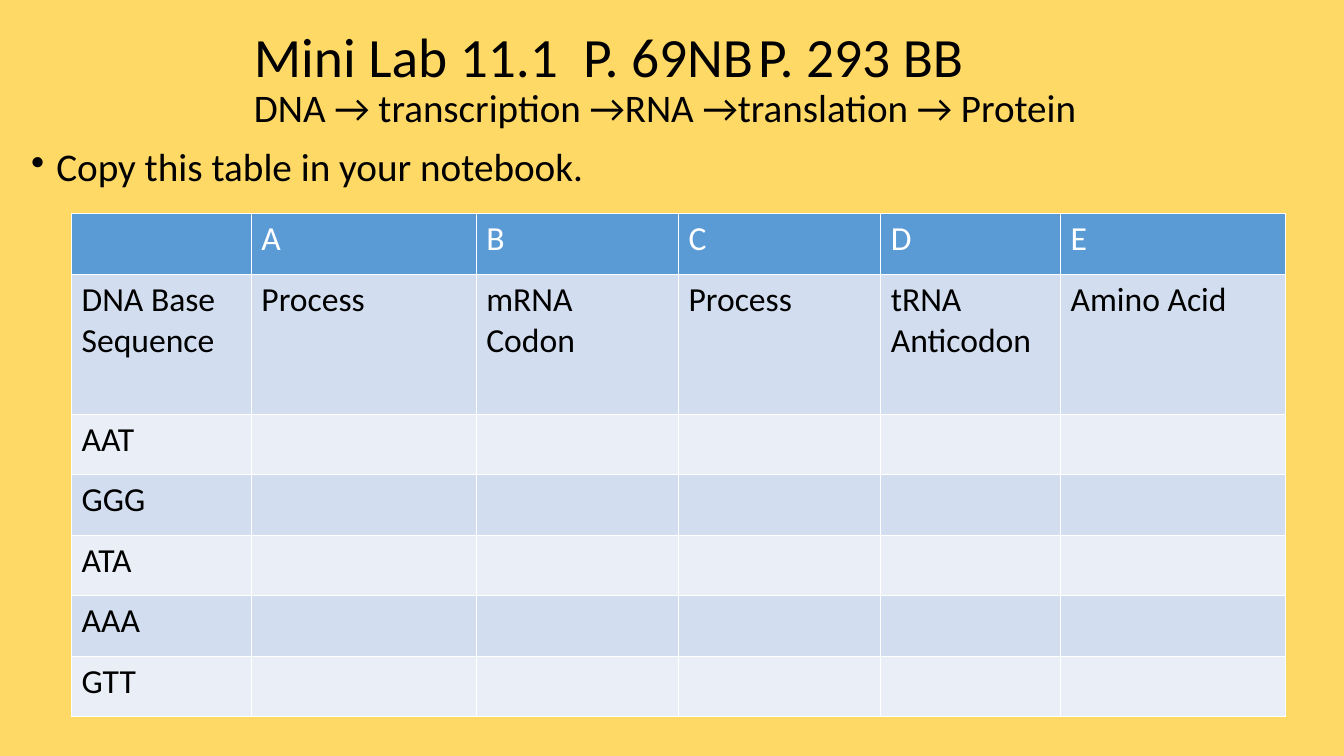
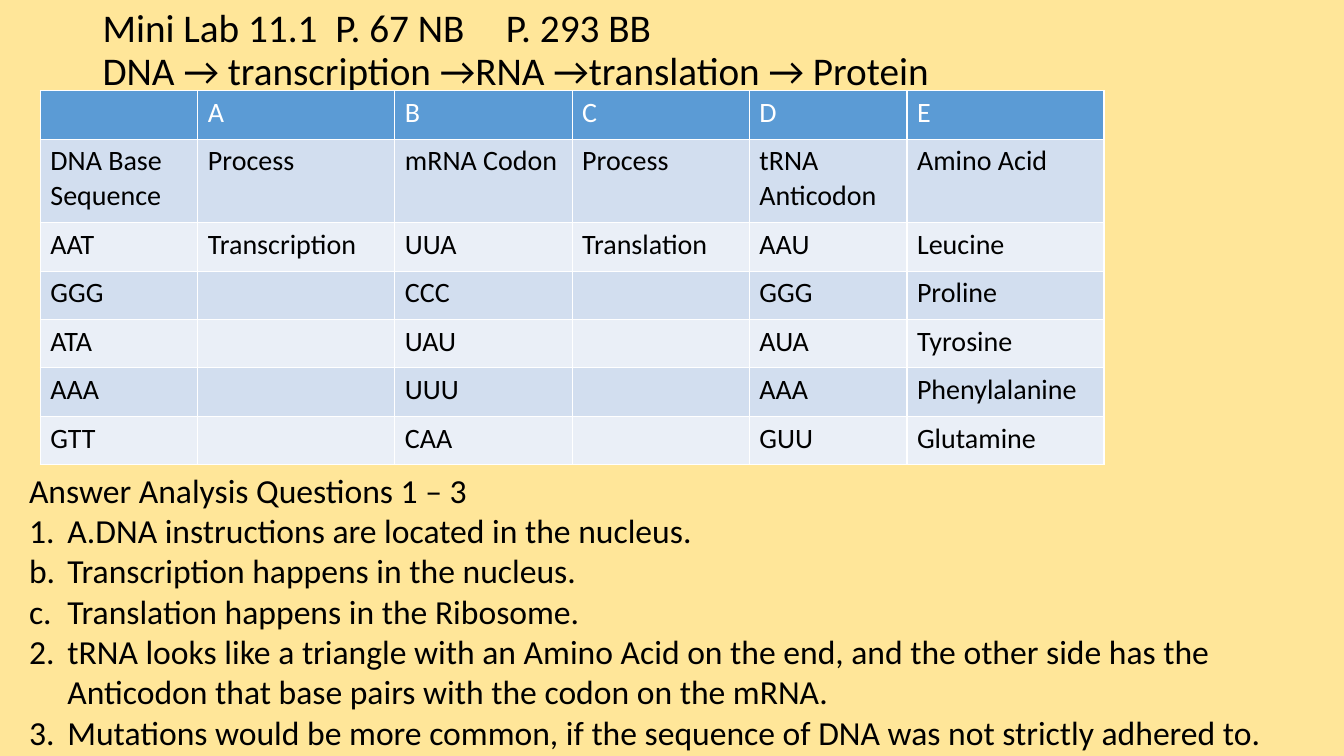
from pptx import Presentation, util as u
from pptx.dml.color import RGBColor
from pptx.enum import text
from pptx.oxml import parse_xml
from pptx.oxml.ns import nsdecls

FONT = "Calibri"
BLACK = RGBColor(0x00, 0x00, 0x00)
WHITE = RGBColor(0xFF, 0xFF, 0xFF)
BLUE = RGBColor(0x5B, 0x9B, 0xD5)
BAND_DARK = RGBColor(0xD2, 0xDE, 0xEF)
BAND_LIGHT = RGBColor(0xEA, 0xEF, 0xF7)
GOLD = RGBColor(0xFF, 0xD9, 0x66)
PALE_GOLD = RGBColor(0xFF, 0xE6, 0x99)

COLUMN_WEIGHTS = [8, 10, 9, 9, 8, 10]
HEADINGS = [
    ["", "A", "B", "C", "D", "E"],
    ["DNA Base Sequence", "Process", "mRNA Codon", "Process",
     "tRNA Anticodon", "Amino Acid"],
]
SEQUENCES = ["AAT", "GGG", "ATA", "AAA", "GTT"]
PATHWAY = "DNA → transcription →RNA →translation → Protein"


class Deck:
    """Holds the shared style and the slide being built."""

    def __init__(self):
        self.prs = Presentation()
        self.prs.slide_width = u.Inches(13.33)
        self.prs.slide_height = u.Inches(7.5)
        self.s = None

    def slide(self, color):
        self.s = self.prs.slides.add_slide(self.prs.slide_layouts[6])
        fill = self.s.background.fill
        fill.solid()
        fill.fore_color.rgb = color

    def style(self, r, size, color=BLACK):
        fmt = {"name": FONT, "size": u.Pt(size), "bold": False}
        for key, value in fmt.items():
            setattr(r.font, key, value)
        r.font.color.rgb = color

    def run(self, p, words, size, color=BLACK):
        r = p.add_run()
        r.text = words
        self.style(r, size, color)

    def box(self, at, anchor=text.MSO_ANCHOR.TOP):
        tf = self.s.shapes.add_textbox(*map(u.Inches, at)).text_frame
        tf.word_wrap = True
        tf.vertical_anchor = anchor
        return tf

    def title(self, at, lines):
        p = self.box(at, text.MSO_ANCHOR.MIDDLE).paragraphs[0]
        p.line_spacing = 0.9
        for i, (words, size) in enumerate(lines):
            if i:
                p.add_line_break()
            self.run(p, words, size)

    def marker(self, p, indent, tag, **attrs):
        """Give a paragraph a hanging bullet or number."""
        pPr = p._p.get_or_add_pPr()
        pPr.set("marL", str(u.Inches(indent)))
        pPr.set("indent", str(-u.Inches(indent)))
        bullet = parse_xml(f"<a:{tag} {nsdecls('a')}/>")
        for key, value in attrs.items():
            bullet.set(key, str(value))
        pPr.append(bullet)

    def bullet(self, at, words, size):
        p = self.box(at).paragraphs[0]
        p.line_spacing = 0.9
        p.space_before = u.Pt(10)
        self.marker(p, 0.25, "buChar", char="•")
        self.run(p, words, size)

    def answers(self, at, heading, items, size):
        tf = self.box(at)
        self.run(tf.paragraphs[0], heading, size)
        for scheme, start, words in items:
            p = tf.add_paragraph()
            self.marker(p, 0.38, "buAutoNum", type=scheme, startAt=start)
            self.run(p, words, size)

    def borders(self, cell):
        tcPr = cell._tc.get_or_add_tcPr()
        for i, side in enumerate("LRTB"):
            tcPr.insert(i, parse_xml(
                f'<a:ln{side} {nsdecls("a")} w="{u.Pt(1)}"><a:solidFill>'
                f'<a:srgbClr val="{WHITE}"/></a:solidFill></a:ln{side}>'))

    def table(self, left, top, width, row_height, label_height, results, size):
        rows = HEADINGS + [[seq, *res] for seq, res in zip(SEQUENCES, results)]
        heights = [row_height, label_height] + [row_height] * len(SEQUENCES)
        at = map(u.Inches, (left, top, width, sum(heights)))
        tbl = self.s.shapes.add_table(len(rows), len(COLUMN_WEIGHTS), *at).table
        for col, weight in zip(tbl.columns, COLUMN_WEIGHTS):
            col.width = u.Inches(width * weight / sum(COLUMN_WEIGHTS))
        for i, (row, height) in enumerate(zip(rows, heights)):
            tbl.rows[i].height = u.Inches(height)
            band = BAND_DARK if i % 2 else BAND_LIGHT
            for j, words in enumerate(row):
                cell = tbl.cell(i, j)
                cell.fill.solid()
                cell.fill.fore_color.rgb = band if i else BLUE
                self.borders(cell)
                if words:
                    self.run(cell.text_frame.paragraphs[0], words, size,
                             BLACK if i else WHITE)


def main():
    deck = Deck()

    # Empty table to copy
    deck.slide(GOLD)
    deck.title((2.42, 0.17, 9, 1.25),
               [("Mini Lab 11.1  P. 69NB\tP. 293 BB", 39.6), (PATHWAY, 27.9)])
    deck.bullet((0.21, 1.42, 12.21, 0.6), "Copy this table in your notebook.", 28)
    deck.table(0.71, 2.12, 12.04, 0.6, 1.39, [[""] * 5] * len(SEQUENCES), 24)

    # Completed table and answers
    deck.slide(PALE_GOLD)
    deck.title((0.92, 0, 11.5, 1.02),
               [("Mini Lab 11.1  P. 67 NB\tP. 293 BB", 28), (PATHWAY, 28)])
    deck.table(0.4, 0.9, 10.55, 0.48, 0.83, [
        ["Transcription", "UUA", "Translation", "AAU", "Leucine"],
        ["", "CCC", "", "GGG", "Proline"],
        ["", "UAU", "", "AUA", "Tyrosine"],
        ["", "UUU", "", "AAA", "Phenylalanine"],
        ["", "CAA", "", "GUU", "Glutamine"],
    ], 20)
    number, letter = "arabicPeriod", "alphaLcPeriod"
    deck.answers((0.19, 4.61, 13.14, 2.93), "Answer Analysis Questions 1 – 3", [
        (number, 1, "A.DNA instructions are located in the nucleus."),
        (letter, 2, "Transcription happens in the nucleus."),
        (letter, 2, "Translation happens in the Ribosome."),
        (number, 2, "tRNA looks like a triangle with an Amino Acid on the end, "
         "and the other side has the Anticodon that base pairs with the codon "
         "on the mRNA."),
        (number, 2, "Mutations would be more common, if the sequence of DNA "
         "was not strictly adhered to."),
    ], 24)

    deck.prs.save("out.pptx")


if __name__ == "__main__":
    main()
